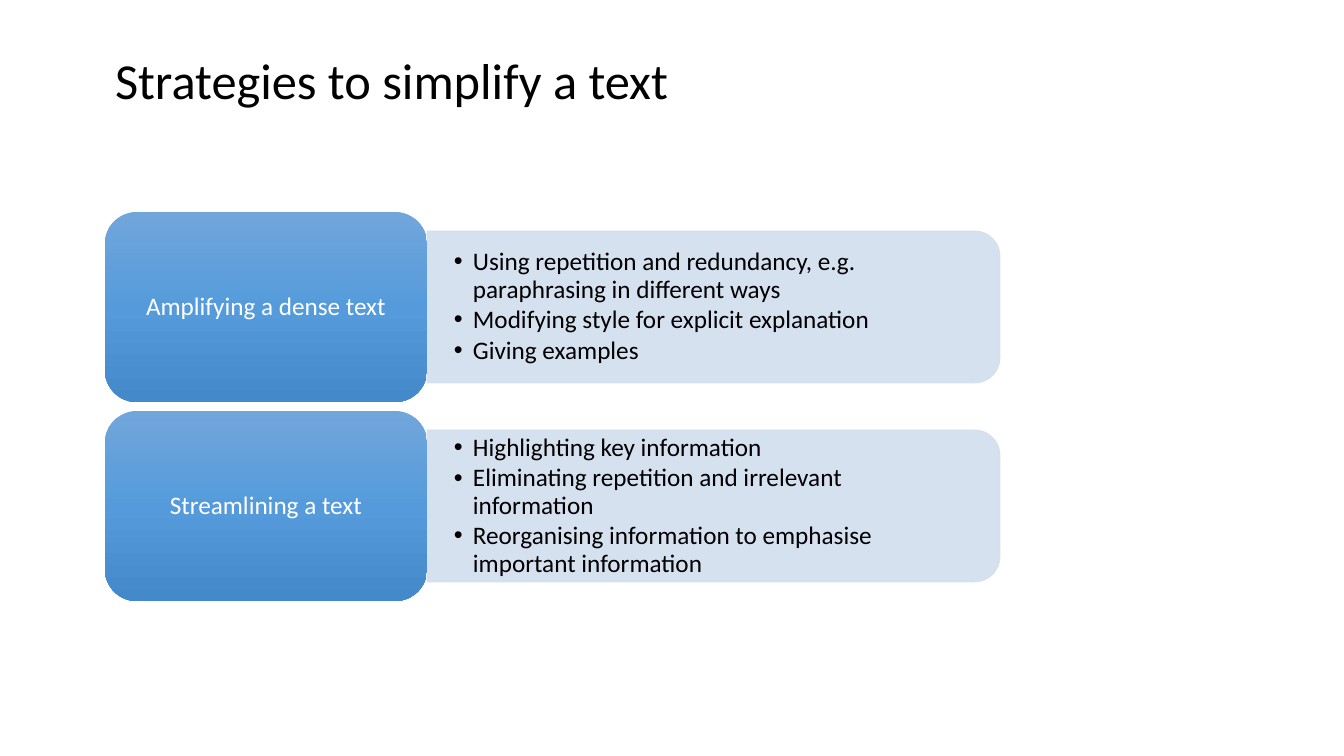
from copy import deepcopy

from pptx import Presentation
from pptx import util as u
from pptx.dml.color import RGBColor
from pptx.enum import shapes, text
from pptx.oxml.ns import qn
from lxml import etree

COLORS = {
    "ink": "000000",
    "label": "FFFFFF",
    "panel": "D2DEEF",
    "card_top": "71A6DB",
    "card_middle": "559BDB",
    "card_bottom": "448ACA",
}
FONT = "Calibri"
STRATEGIES = [
    ("Amplifying a dense text", [
        "Using repetition and redundancy, e.g. paraphrasing in different ways",
        "Modifying style for explicit explanation",
        "Giving examples",
    ]),
    ("Streamlining a text", [
        "Highlighting key information",
        "Eliminating repetition and irrelevant information",
        "Reorganising information to emphasise important information",
    ]),
]


def px(n):
    return u.Emu(round(n * 914400 / 100.8))


def color(name):
    return RGBColor.from_string(COLORS[name])


def style_font(p, size, name):
    for r in p.runs:
        r.font.name = FONT
        r.font.size = u.Pt(size)
        r.font.color.rgb = color(name)


def set_frame(tf, anchor, inset_x, inset_y):
    tf.word_wrap = True
    tf.auto_size = text.MSO_AUTO_SIZE.NONE
    tf.vertical_anchor = anchor
    tf.margin_left = tf.margin_right = px(inset_x)
    tf.margin_top = tf.margin_bottom = px(inset_y)


def add_title(s, x, y, w, h):
    sp = s.shapes.title
    sp.left, sp.top, sp.width, sp.height = px(x), px(y), px(w), px(h)
    tf = sp.text_frame
    tf.text = "Strategies to simplify a text"
    set_frame(tf, text.MSO_ANCHOR.BOTTOM, 10, 5)
    p = tf.paragraphs[0]
    p.alignment = text.PP_ALIGN.LEFT
    p.line_spacing = 0.9
    style_font(p, 36, "ink")


def add_panel(s, x, y, w, h):
    sp = s.shapes.add_shape(
        shapes.MSO_SHAPE.ROUND_2_SAME_RECTANGLE,
        px(x + (w - h) / 2), px(y + (h - w) / 2), px(h), px(w))
    sp.rotation = 90
    sp.shadow.inherit = False
    sp.fill.solid()
    sp.fill.fore_color.rgb = color("panel")
    sp.line.color.rgb = color("panel")
    sp.line.width = u.Pt(0.5)
    for clr in sp._element.spPr.iter(qn("a:srgbClr")):
        etree.SubElement(clr, qn("a:alpha"), val="90000")


def add_bullets(s, items, x, y, w, h):
    tf = s.shapes.add_textbox(px(x), px(y), px(w), px(h)).text_frame
    set_frame(tf, text.MSO_ANCHOR.MIDDLE, 27, 14)
    for i, item in enumerate(items):
        p = tf.add_paragraph() if i else tf.paragraphs[0]
        p.text = item
        p.level = 1
        p.line_spacing = 0.9
        p.space_after = u.Pt(2.5)
        pPr = p._p.get_or_add_pPr()
        pPr.set("marL", str(px(19)))
        pPr.set("indent", str(-px(19)))
        etree.SubElement(pPr, qn("a:buFont"), typeface="Arial")
        etree.SubElement(pPr, qn("a:buChar"), char="•")
        style_font(p, 18, "ink")


def add_card(s, label, x, y, w, h):
    sp = s.shapes.add_shape(
        shapes.MSO_SHAPE.ROUNDED_RECTANGLE, px(x), px(y), px(w), px(h))
    sp.shadow.inherit = False
    sp.line.fill.background()
    sp.fill.gradient()
    sp.fill.gradient_angle = 270
    stops = sp._element.spPr.find(".//" + qn("a:gsLst"))
    stops.append(deepcopy(stops[0]))
    names = ("card_top", "card_middle", "card_bottom")
    for i, (stop, name) in enumerate(zip(sp.fill.gradient_stops, names)):
        stop.position = i / 2
        stop.color.rgb = color(name)
    tf = sp.text_frame
    tf.text = label
    set_frame(tf, text.MSO_ANCHOR.MIDDLE, 7, 4)
    p = tf.paragraphs[0]
    p.alignment = text.PP_ALIGN.CENTER
    p.line_spacing = 0.9
    style_font(p, 18, "label")


def add_strategy(s, label, items, x, y, w, h):
    card_w, panel_h = 322, 152
    panel_x, panel_w = x + card_w, w - card_w
    panel_y = y + (h - panel_h) // 2
    add_panel(s, panel_x, panel_y, panel_w, panel_h)
    add_bullets(s, items, panel_x, panel_y + 7, panel_w - 7, panel_h - 14)
    add_card(s, label, x, y, card_w, h)


def main():
    prs = Presentation()
    prs.slide_width, prs.slide_height = px(1344), px(756)
    s = prs.slides.add_slide(prs.slide_layouts[0])
    subtitle = s.placeholders[1]._element
    subtitle.getparent().remove(subtitle)
    add_title(s, 105, 40, 1072, 75)
    row_h, gap = 190, 9
    for i, (label, items) in enumerate(STRATEGIES):
        add_strategy(s, label, items, 105, 212 + i * (row_h + gap), 895, row_h)
    prs.save("out.pptx")


if __name__ == "__main__":
    main()
